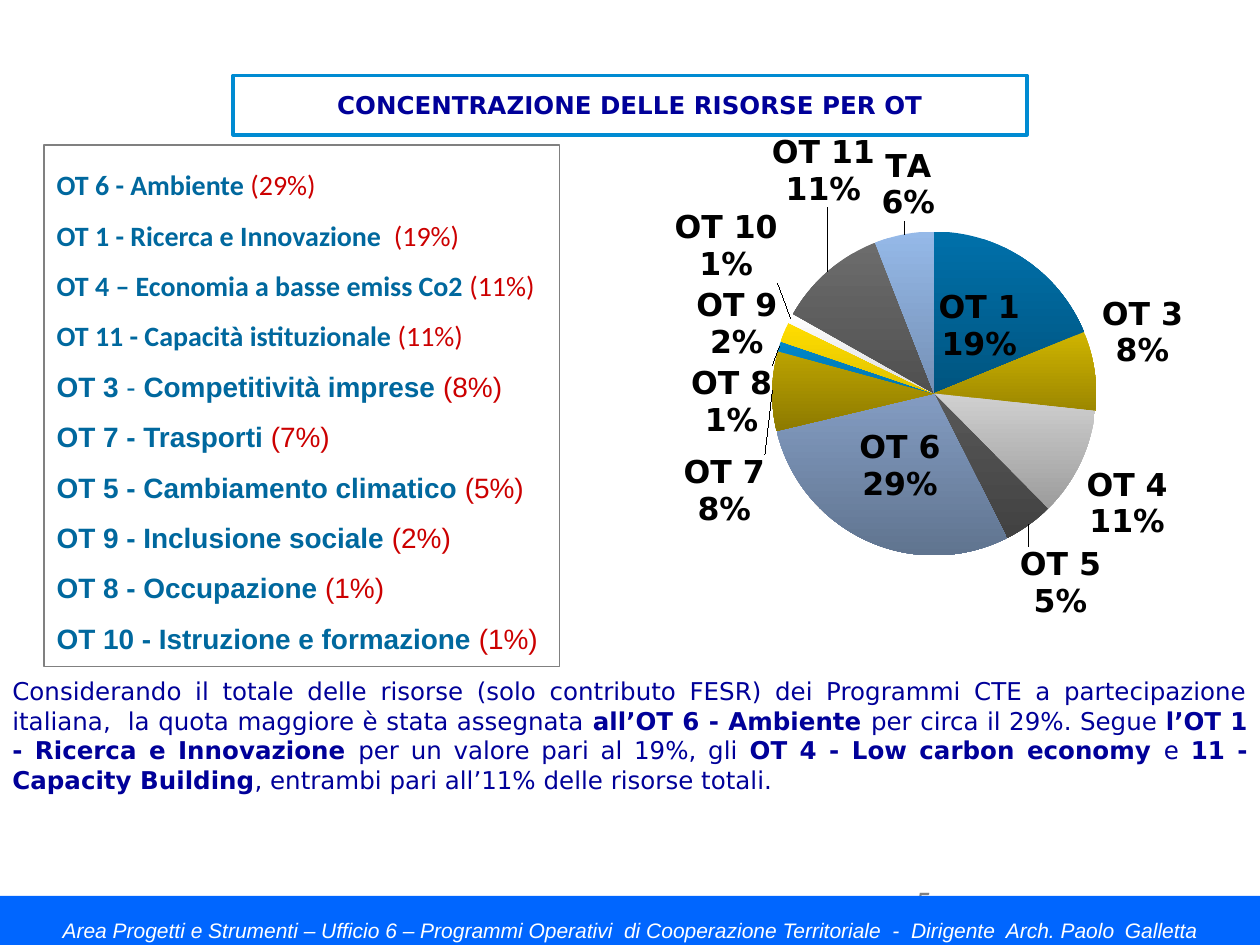
"""Build the slide on how resources are concentrated across thematic objectives."""
import pptx
import pptx.chart.data
import pptx.dml.color
import pptx.enum.chart
import pptx.enum.shapes
import pptx.enum.text
import pptx.oxml
import pptx.util
from lxml import etree

Inches, Pt = pptx.util.Inches, pptx.util.Pt
RGB = pptx.dml.color.RGBColor
ALIGN = pptx.enum.text.PP_ALIGN
ANCHOR = pptx.enum.text.MSO_ANCHOR

NAVY = RGB(0x00, 0x00, 0x99)
TEAL = RGB(0x00, 0x68, 0x9E)
RED = RGB(0xCC, 0x00, 0x00)
GRAY = RGB(0x80, 0x80, 0x80)
SKY = RGB(0x00, 0x8B, 0xD2)
BLUE = RGB(0x00, 0x66, 0xFF)
WHITE = RGB(0xFF, 0xFF, 0xFF)
BLACK = RGB(0x00, 0x00, 0x00)

TITLE = "CONCENTRAZIONE DELLE RISORSE PER OT"
OBJECTIVES = [
    ("Calibri", ["OT 6 - Ambiente "], "(29%)"),
    ("Calibri", ["OT 1 - Ricerca e Innovazione  "], "(19%)"),
    ("Calibri", ["OT 4 – Economia a basse emiss Co2 "], "(11%)"),
    ("Calibri", ["OT 11 - Capacità istituzionale "], "(11%)"),
    ("Arial", ["OT 3", " - ", "Competitività imprese "], "(8%)"),
    ("Arial", ["OT 7 - Trasporti "], "(7%)"),
    ("Arial", ["OT 5 - Cambiamento climatico "], "(5%)"),
    ("Arial", ["OT 9 - Inclusione sociale "], "(2%)"),
    ("Arial", ["OT 8 - Occupazione "], "(1%)"),
    ("Arial", ["OT 10 - Istruzione e formazione "], "(1%)"),
]
COMMENT = [
    "Considerando il totale delle risorse (solo contributo FESR) dei Programmi CTE a "
    "partecipazione italiana,  la quota maggiore è stata assegnata ",
    "all’OT 6 - Ambiente ", "per circa il 29%. Segue ",
    "l’OT 1 - Ricerca e Innovazione ", "per un valore pari al 19%, gli ",
    "OT 4 - Low carbon economy ", "e ", "11 - Capacity Building",
    ", entrambi pari all’11% delle risorse totali.",
]
FOOTER = [
    ("Area Progetti e Strumenti – Ufficio 6 – Programmi Operativi  di Cooperazione "
     "Territoriale  -  Dirigente  Arch. Paolo", 12),
    (" ", 18), ("Galletta", 12),
]
# name, value, top colour, bottom colour, label place, label shift
SLICES = [
    ("OT 1", 19, "0070AA", "005580", "ctr", (0, 0)),
    ("OT 3", 8, "CFB400", "9C8700", "outEnd", (0, 0)),
    ("OT 4", 11, "D0D0D0", "9C9C9C", "outEnd", (0, 0)),
    ("OT 5", 5, "585858", "424242", "outEnd", (-0.02, 0.03)),
    ("OT 6", 29, "839CC2", "60748F", "ctr", (0, 0)),
    ("OT 7", 8, "BCA300", "8D7A00", "outEnd", (0, 0.19)),
    ("OT 8", 1, "0086C8", "0078B4", "outEnd", (0, 0.18)),
    ("OT 9", 2, "FFDD00", "E0C200", "outEnd", (0, 0.06)),
    ("OT 10", 1, "FFFFFF", "DCDCDC", "outEnd", (-0.01, -0.06)),
    ("OT 11", 11, "6C6C6C", "505050", "outEnd", (0.08, -0.11)),
    ("TA", 6, "95B9E8", "7590B5", "outEnd", (0.05, -0.01)),
]
PLOT = {"x": 0.28, "y": 0.18, "w": 0.5, "h": 0.62}
NS = 'xmlns:c="http://schemas.openxmlformats.org/drawingml/2006/chart"'
SHOW = ('<c:showLegendKey val="0"/><c:showVal val="0"/><c:showCatName val="1"/>'
        '<c:showSerName val="0"/><c:showPercent val="1"/><c:showBubbleSize val="0"/>'
        '<c:separator>\n</c:separator>')


def place(sp, left, top, width, height):
    sp.left, sp.top, sp.width, sp.height = map(Inches, (left, top, width, height))


def add_run(p, text, font, size, color, bold=False, italic=False):
    r = p.add_run()
    r.text = text
    r.font.name, r.font.size = font, Pt(size)
    r.font.bold, r.font.italic = bold, italic
    r.font.color.rgb = color


def outline(sp, color, width):
    sp.line.color.rgb, sp.line.width = color, Pt(width)


def add_objectives(sp):
    place(sp, 0.35, 1.15, 4.09, 4.14)
    outline(sp, GRAY, 0.75)
    tf = sp.text_frame
    tf.auto_size = pptx.enum.text.MSO_AUTO_SIZE.NONE
    for i, (font, names, share) in enumerate(OBJECTIVES):
        p = tf.paragraphs[0] if i == 0 else tf.add_paragraph()
        p.line_spacing, p.space_before = 1.5, Pt(0)
        pPr = p._p.get_or_add_pPr()
        pPr.set("marL", "0")
        pPr.set("indent", "0")
        etree.SubElement(pPr, pptx.oxml.ns.qn("a:buNone"))
        for j, name in enumerate(names):
            add_run(p, name, font, 16, TEAL, bold=j != 1)
        add_run(p, share, font, 16, RED)


def add_pie(s):
    data = pptx.chart.data.CategoryChartData()
    data.categories = [row[0] for row in SLICES]
    data.add_series("Series 1", [row[1] for row in SLICES])
    chart = s.shapes.add_chart(
        pptx.enum.chart.XL_CHART_TYPE.PIE, Inches(4.69), Inches(1.07),
        Inches(5.14), Inches(4.19), data).chart
    chart.has_legend = chart.has_title = False
    chart.font.name, chart.font.size, chart.font.bold = "DejaVu Sans", Pt(18), True
    chart.font.color.rgb = BLACK
    plot = chart.plots[0]
    plot.vary_by_categories = True
    series = plot.series[0]
    labels = ""
    for i, (_, _, top, bottom, spot, (dx, dy)) in enumerate(SLICES):
        fill = series.points[i].format.fill
        fill.gradient()
        fill.gradient_angle = 270
        for stop, color in zip(fill.gradient_stops, (top, bottom)):
            stop.color.rgb = RGB.from_string(color)
        labels += (f'<c:dLbl><c:idx val="{i}"/><c:layout><c:manualLayout><c:x val="{dx}"/>'
                   f'<c:y val="{dy}"/></c:manualLayout></c:layout>'
                   f'<c:dLblPos val="{spot}"/>{SHOW}</c:dLbl>')
    cat = series._element.find(pptx.oxml.ns.qn("c:cat"))
    cat.addprevious(pptx.oxml.parse_xml(
        f'<c:dLbls {NS}>{labels}{SHOW}<c:showLeaderLines val="1"/></c:dLbls>'))
    area = chart._chartSpace.find(".//" + pptx.oxml.ns.qn("c:plotArea"))
    for old in area.findall(pptx.oxml.ns.qn("c:layout")):
        area.remove(old)
    sizes = "".join(f'<c:{k} val="{v}"/>' for k, v in PLOT.items())
    area.insert(0, pptx.oxml.parse_xml(
        f'<c:layout {NS}><c:manualLayout><c:layoutTarget val="inner"/>'
        f'<c:xMode val="edge"/><c:yMode val="edge"/>{sizes}</c:manualLayout></c:layout>'))


def main():
    prs = pptx.Presentation()
    prs.slide_width, prs.slide_height = Inches(10), Inches(7.5)
    s = prs.slides.add_slide(prs.slide_layouts[1])
    title, body = s.placeholders

    place(title, 1.85, 0.6, 6.3, 0.47)
    outline(title, SKY, 2)
    add_run(title.text_frame.paragraphs[0], TITLE, "DejaVu Sans", 14, NAVY, bold=True)

    number = s.shapes.add_textbox(Inches(7.17), Inches(6.95), Inches(2.33), Inches(0.4))
    add_run(number.text_frame.paragraphs[0], "5", "Calibri", 18, GRAY)

    add_pie(s)
    add_objectives(body)

    footer = s.shapes.add_shape(pptx.enum.shapes.MSO_SHAPE.RECTANGLE,
                                Inches(0), Inches(7.11), Inches(10), Inches(0.47))
    footer.shadow.inherit = False
    footer.fill.solid()
    footer.fill.fore_color.rgb = BLUE
    footer.line.fill.background()
    footer.text_frame.vertical_anchor = ANCHOR.MIDDLE
    p = footer.text_frame.paragraphs[0]
    p.alignment = ALIGN.CENTER
    for text, size in FOOTER:
        add_run(p, text, "Arial", size, WHITE, italic=True)

    comment = s.shapes.add_textbox(Inches(0), Inches(5.32), Inches(10), Inches(1.04))
    comment.text_frame.word_wrap = True
    p = comment.text_frame.paragraphs[0]
    p.alignment = ALIGN.JUSTIFY
    for i, text in enumerate(COMMENT):
        add_run(p, text, "DejaVu Sans", 14, NAVY, bold=i % 2 == 1)

    prs.save("out.pptx")


if __name__ == "__main__":
    main()
